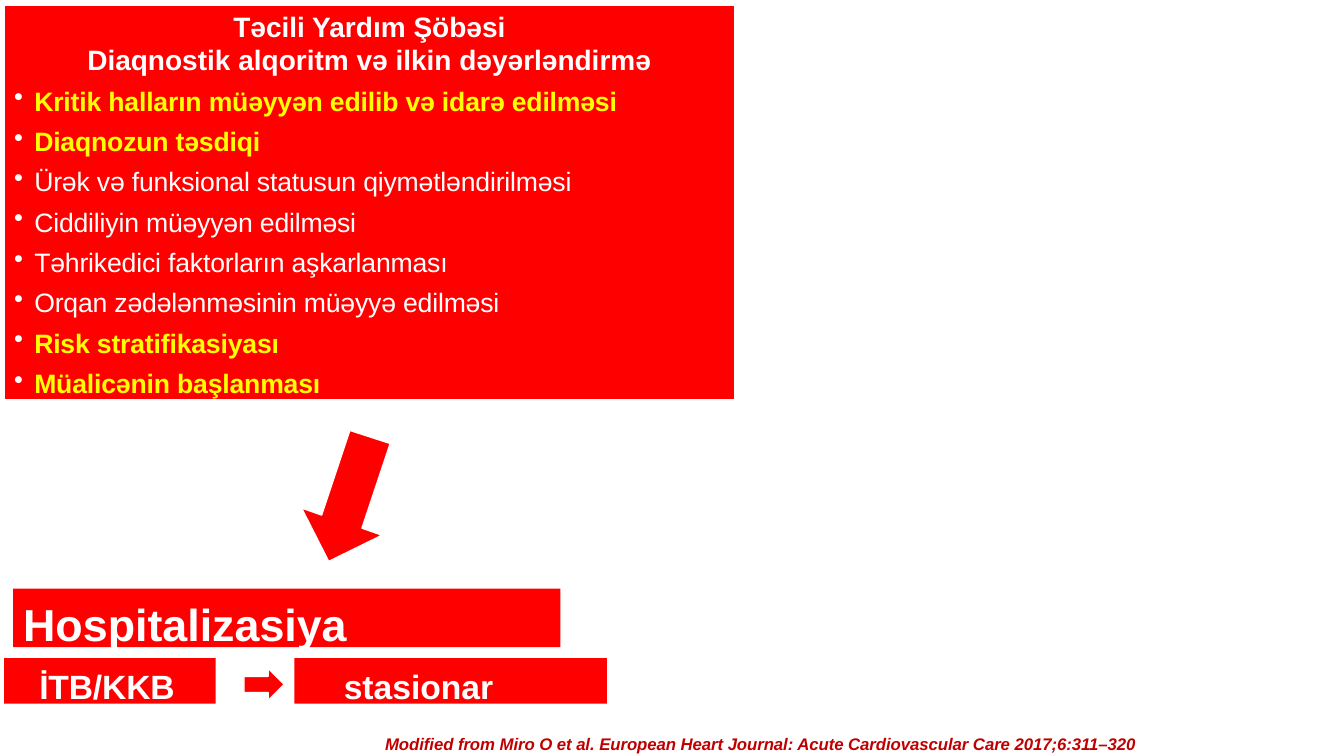
from lxml.etree import SubElement
from pptx import Presentation
from pptx.dml.color import RGBColor
from pptx.enum.shapes import MSO_SHAPE
from pptx.enum.text import MSO_ANCHOR, PP_ALIGN
from pptx.oxml.ns import qn
from pptx.util import Inches, Pt

RED = RGBColor(0xFF, 0x00, 0x00)
DARK_RED = RGBColor(0xC0, 0x00, 0x00)
YELLOW = RGBColor(0xFF, 0xFF, 0x00)
WHITE = RGBColor(0xFF, 0xFF, 0xFF)

# Content
HEADINGS = ["Təcili Yardım Şöbəsi", "Diaqnostik alqoritm və ilkin dəyərləndirmə"]
STEPS = [  # text, highlighted
    ("Kritik halların müəyyən edilib və idarə edilməsi", True),
    ("Diaqnozun təsdiqi", True),
    ("Ürək və funksional statusun qiymətləndirilməsi", False),
    ("Ciddiliyin müəyyən edilməsi", False),
    ("Təhrikedici faktorların aşkarlanması", False),
    ("Orqan zədələnməsinin müəyyə edilməsi", False),
    ("Risk stratifikasiyası", True),
    ("Müalicənin başlanması", True),
]
DESTINATIONS = [  # text, box, size, indent, letter spacing
    ("Hospitalizasiya", (0.13, 5.84, 5.43, 0.58), 32, 0.1, 0),
    ("İTB/KKB", (0.04, 6.53, 2.1, 0.45), 24, 0.35, -0.1),
    ("stasionar", (2.92, 6.53, 3.1, 0.45), 24, 0.49, 0),
]
ARROWS = [
    [(3.47, 4.27), (3.19, 5.11), (2.99, 5.04), (3.26, 5.57),
     (3.79, 5.31), (3.59, 5.24), (3.87, 4.4)],
    [(2.66, 6.63), (2.66, 6.71), (2.42, 6.71), (2.42, 6.87),
     (2.66, 6.87), (2.66, 6.95), (2.82, 6.79)],
]
CITATION = ("Modified from Miro O et al. European Heart Journal: "
            "Acute Cardiovascular Care 2017;6:311–320")


def style(sp, outlined=False):
    sp.shadow.inherit = False
    sp.fill.solid()
    sp.fill.fore_color.rgb = RED
    if outlined:
        sp.line.color.rgb = WHITE
        sp.line.width = Pt(1)
    else:
        sp.line.fill.background()


def prepare_frame(sp, top):
    tf = sp.text_frame
    tf.word_wrap = True
    tf.vertical_anchor = MSO_ANCHOR.TOP
    tf.margin_left = tf.margin_right = tf.margin_bottom = 0
    tf.margin_top = Inches(top)
    return tf


def add_box(s, box, top, outlined=False):
    sp = s.shapes.add_shape(MSO_SHAPE.RECTANGLE, *map(Inches, box))
    style(sp, outlined)
    return prepare_frame(sp, top)


def add_text(tf, text, size=20, color=WHITE, bold=True, italic=False,
             align=PP_ALIGN.LEFT, before=0, indent=0, spacing=0, bullet=False):
    p = tf.paragraphs[0] if not tf.text else tf.add_paragraph()
    p.alignment = align
    p.space_before = Pt(before)
    pPr = p._p.get_or_add_pPr()
    pPr.set("marL", str(Inches(indent)))
    pPr.set("indent", str(Inches(-0.2 if bullet else 0)))
    if bullet:
        clr = SubElement(pPr, qn("a:buClr"))
        SubElement(clr, qn("a:srgbClr"), val=str(WHITE))
        SubElement(pPr, qn("a:buChar"), char="•")
    r = p.add_run()
    r.text = text
    r.font.name = "Arial"
    r.font.size = Pt(size)
    r.font.bold = bold
    r.font.italic = italic
    r.font.color.rgb = color
    if spacing:
        r._r.get_or_add_rPr().set("spc", str(round(spacing * 100)))


def main():
    prs = Presentation()
    prs.slide_width, prs.slide_height = Inches(13.33), Inches(7.5)
    s = prs.slides.add_slide(prs.slide_layouts[6])

    # Citation
    tb = s.shapes.add_textbox(*map(Inches, (3.81, 7.26, 7.57, 0.23)))
    add_text(prepare_frame(tb, 0.02), CITATION, size=12, color=DARK_RED,
             italic=True, indent=0.01, spacing=-0.05)

    # Emergency department panel
    tf = add_box(s, (0.04, 0.05, 7.25, 3.92), 0.04, outlined=True)
    for text in HEADINGS:
        add_text(tf, text, align=PP_ALIGN.CENTER)
    for text, key in STEPS:
        add_text(tf, text, size=19, color=YELLOW if key else WHITE, bold=key,
                 before=6, indent=0.3, spacing=-0.1, bullet=True)

    # Destinations
    for text, box, size, indent, spacing in DESTINATIONS:
        add_text(add_box(s, box, 0.08), text, size=size, indent=indent,
                 spacing=spacing)

    # Arrows
    for points in ARROWS:
        corners = [(Inches(x), Inches(y)) for x, y in points]
        fb = s.shapes.build_freeform(*corners[0])
        fb.add_line_segments(corners[1:], close=True)
        style(fb.convert_to_shape(), outlined=True)

    prs.save("out.pptx")


if __name__ == "__main__":
    main()
